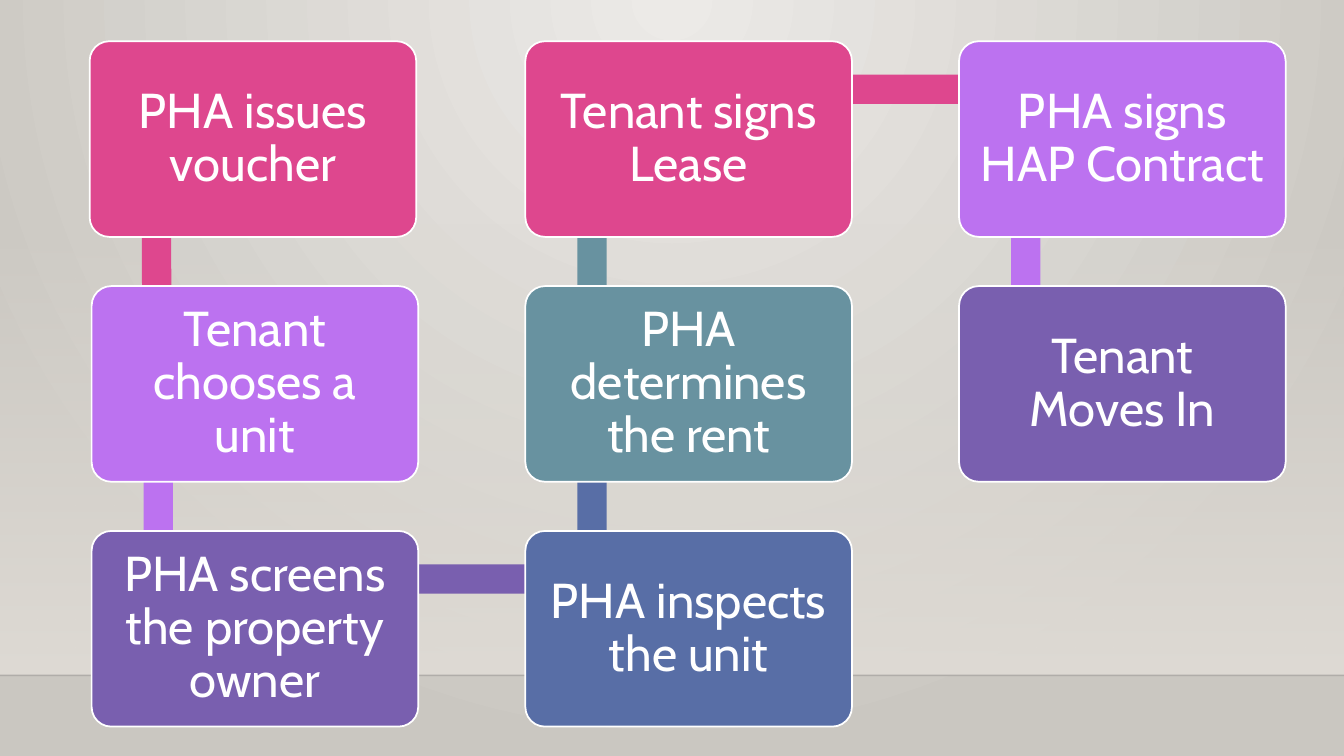
from dataclasses import dataclass

from lxml.etree import SubElement
from pptx import Presentation
from pptx.dml.color import RGBColor
from pptx.enum.shapes import MSO_CONNECTOR, MSO_SHAPE
from pptx.enum.text import MSO_ANCHOR, PP_ALIGN
from pptx.oxml import parse_xml
from pptx.oxml.ns import nsdecls, qn
from pptx.util import Cm, Pt


@dataclass(frozen=True)
class Theme:
    font: str = "Cabin"
    size: int = 35
    border: float = 1.25
    white: str = "FFFFFF"
    pink: str = "DE478E"
    violet: str = "BC72F0"
    purple: str = "795FAF"
    blue: str = "586EA6"
    teal: str = "6892A0"
    wall_light: str = "ECEAE7"
    wall_dark: str = "CAC7C1"
    glow: str = "DFDBD5"
    floor_line: str = "000001"


T = Theme()

# Slide and grid measures, in centimetres
SLIDE_W, SLIDE_H = 33.87, 19.05
FLOOR_Y = 17.02
GRID_X, GRID_Y = 2.31, 1.04
PITCH_X, PITCH_Y = 10.93, 6.17
BOX_W, BOX_H = 8.23, 4.93
BAR = 0.74

# Text, colour, column, row, sideways nudge and tilt of the bar that follows
STEPS = [
    ("PHA issues voucher", T.pink, 0, 0, -0.05, -0.3),
    ("Tenant chooses a unit", T.violet, 0, 1, 0, 0),
    ("PHA screens the property owner", T.purple, 0, 2, 0, 0),
    ("PHA inspects the unit", T.blue, 1, 2, 0, 0),
    ("PHA determines the rent", T.teal, 1, 1, 0, 0),
    ("Tenant signs Lease", T.pink, 1, 0, 0, 0),
    ("PHA signs HAP Contract", T.violet, 2, 0, 0, 0),
    ("Tenant Moves In", T.purple, 2, 1, 0, 0),
]


def set_gradient(fill, element, start, end, start_alpha, shading):
    """Give the fill of an element two stops and the shading XML."""
    fill.background()
    plain = element.find(".//" + qn("a:noFill"))
    plain.getparent().replace(plain, parse_xml(
        f'<a:gradFill {nsdecls("a")} rotWithShape="1"><a:gsLst>'
        f'<a:gs pos="0"><a:srgbClr val="{start}">'
        f'<a:alpha val="{start_alpha * 1000}"/></a:srgbClr></a:gs>'
        f'<a:gs pos="100000"><a:srgbClr val="{end}"/></a:gs>'
        f'</a:gsLst>{shading}</a:gradFill>'))


def add_block(s, kind, x, y, w, h, color=None):
    """Add a preset shape without outline or shadow."""
    sp = s.shapes.add_shape(kind, Cm(x), Cm(y), Cm(w), Cm(h))
    sp.shadow.inherit = False
    sp.line.fill.background()
    if color:
        sp.fill.solid()
        sp.fill.fore_color.rgb = RGBColor.from_string(color)
    return sp


def add_backdrop(s):
    set_gradient(s.background.fill, s.element, T.wall_light, T.wall_dark, 100,
                 '<a:path path="circle"><a:fillToRect l="43000" t="0" '
                 'r="43000" b="100000"/></a:path>')
    glow = add_block(s, MSO_SHAPE.RECTANGLE, 0, 5.61, SLIDE_W, FLOOR_Y - 5.61)
    set_gradient(glow.fill, glow.element, T.glow, T.glow, 0,
                 '<a:lin ang="5400000" scaled="0"/>')


def add_floor_line(s):
    ln = s.shapes.add_connector(MSO_CONNECTOR.STRAIGHT, Cm(0), Cm(FLOOR_Y),
                                Cm(SLIDE_W), Cm(FLOOR_Y))
    ln.line.width = Pt(1)
    ln.line.color.rgb = RGBColor.from_string(T.floor_line)
    color = ln.element.find(".//" + qn("a:srgbClr"))
    SubElement(color, qn("a:alpha")).set("val", "20000")
    SubElement(ln.element.spPr, qn("a:effectLst"))


def add_bar(s, color, x, y, dx, dy, tilt):
    """Add the bar from the box at x, y to its neighbour dx, dy cells away."""
    if dx:
        add_block(s, MSO_SHAPE.RECTANGLE, x + 1.67, y + 0.84,
                  PITCH_X - 0.03, BAR, color)
    else:
        top = min(y, y + dy * PITCH_Y) + 1.19
        bar = add_block(s, MSO_SHAPE.RECTANGLE, x + 1.31, top,
                        BAR, PITCH_Y - 0.02, color)
        bar.rotation = tilt


def add_box(s, text, color, x, y):
    sp = add_block(s, MSO_SHAPE.ROUNDED_RECTANGLE, x, y, BOX_W, BOX_H, color)
    sp.adjustments[0] = 0.1
    sp.line.color.rgb = RGBColor.from_string(T.white)
    sp.line.width = Pt(T.border)
    tf = sp.text_frame
    tf.word_wrap = True
    tf.vertical_anchor = MSO_ANCHOR.MIDDLE
    tf.margin_left = tf.margin_right = Cm(0.38)
    tf.margin_top = tf.margin_bottom = Cm(0.38)
    p = tf.paragraphs[0]
    p.text = text
    p.alignment = PP_ALIGN.CENTER
    p.line_spacing = 0.9
    p.font.name = T.font
    p.font.size = Pt(T.size)
    p.font.color.rgb = RGBColor.from_string(T.white)


def main():
    prs = Presentation()
    prs.slide_width, prs.slide_height = Cm(SLIDE_W), Cm(SLIDE_H)
    s = prs.slides.add_slide(prs.slide_layouts[6])

    # Room backdrop
    add_backdrop(s)
    add_floor_line(s)

    # Winding process: each bar lies under the boxes it joins
    for i, (text, color, col, row, nudge, tilt) in enumerate(STEPS):
        x = GRID_X + col * PITCH_X + nudge
        y = GRID_Y + row * PITCH_Y
        if i + 1 < len(STEPS):
            next_col, next_row = STEPS[i + 1][2:4]
            add_bar(s, color, x, y, next_col - col, next_row - row, tilt)
        add_box(s, text, color, x, y)

    prs.save("out.pptx")


if __name__ == "__main__":
    main()
